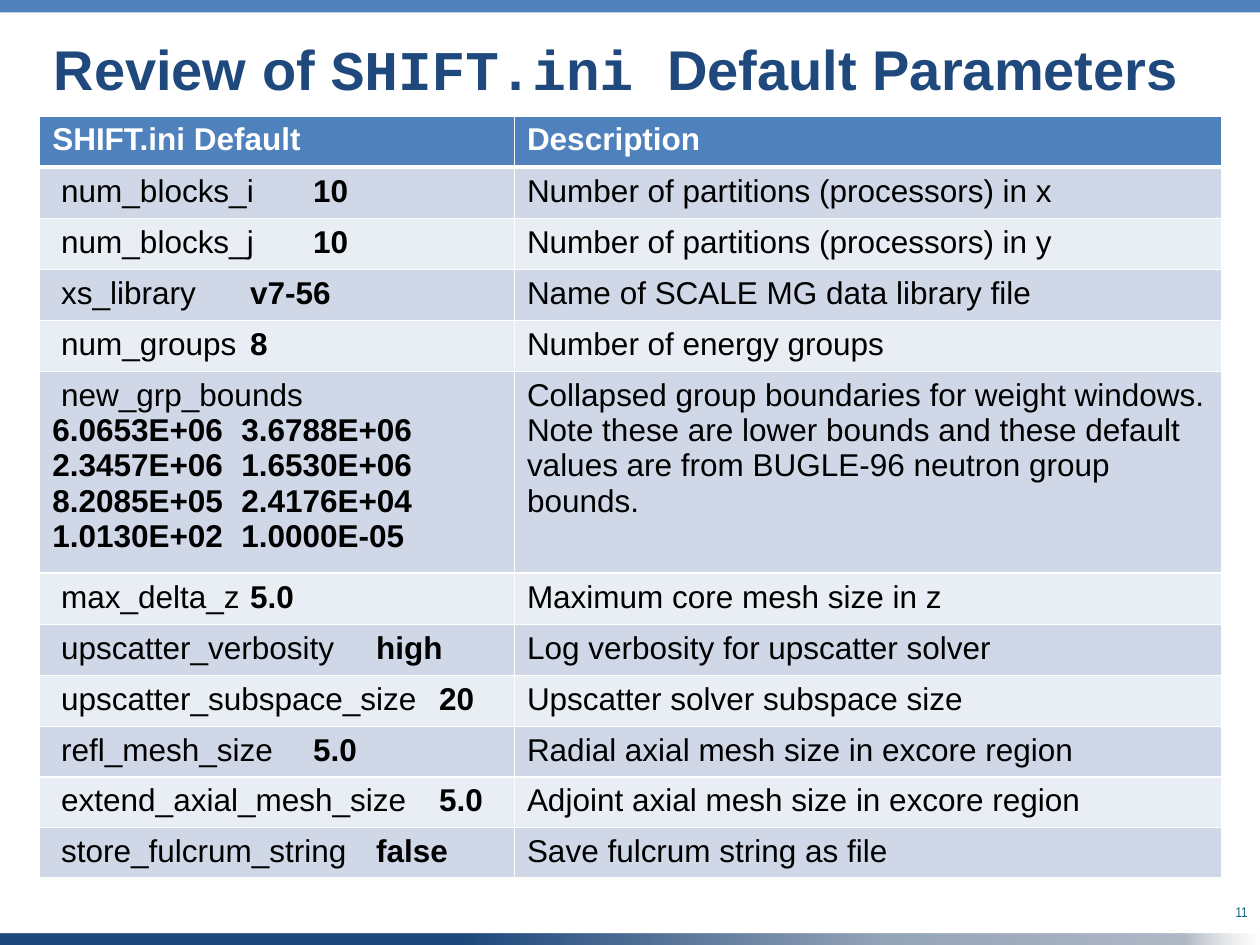
"""Build the slide reviewing the SHIFT.ini default parameters."""
from pptx import Presentation
from pptx.dml.color import RGBColor
from pptx.enum import shapes, text
from pptx.oxml import ns, parse_xml
from pptx.util import Cm, Pt

COLORS = {"navy": "1F497D", "blue": "4F81BD", "teal": "096582", "white": "FFFFFF",
          "black": "000000", "odd": "D0D8E8", "even": "E9EDF4"}
TITLE = [("Review of ", "Arial"), ("SHIFT.ini ", "Courier New"), ("Default Parameters", "Arial")]
PAGE_NUMBER = "11"
HEADER = ("SHIFT.ini Default", "Description")
BOUNDS = [("6.0653E+06", "3.6788E+06"), ("2.3457E+06", "1.6530E+06"),
          ("8.2085E+05", "2.4176E+04"), ("1.0130E+02", "1.0000E-05")]
PARAMETERS = [
    ("num_blocks_i", "10", "Number of partitions (processors) in x"),
    ("num_blocks_j", "10", "Number of partitions (processors) in y"),
    ("xs_library", "v7-56", "Name of SCALE MG data library file"),
    ("num_groups", "8", "Number of energy groups"),
    ("new_grp_bounds", BOUNDS, "Collapsed group boundaries for weight windows. Note these are "
     "lower bounds and these default values are from BUGLE-96 neutron group bounds."),
    ("max_delta_z", "5.0", "Maximum core mesh size in z"),
    ("upscatter_verbosity", "high", "Log verbosity for upscatter solver"),
    ("upscatter_subspace_size", "20", "Upscatter solver subspace size"),
    ("refl_mesh_size", "5.0", "Radial axial mesh size in excore region"),
    ("extend_axial_mesh_size", "5.0", "Adjoint axial mesh size in excore region"),
    ("store_fulcrum_string", "false", "Save fulcrum string as file"),
]
COLUMNS = (9.57, 14.26)
ROWS = [1.03] * 5 + [3.8] + [1.03] * 3 + [0.96] * 3
GRADIENT = [(37, "1F497D", 100), (70, "95A4B8", 100), (94, "B0B9C6", 100), (100, "DBDBDB", 0)]


def rgb(name):
    """Return the named colour."""
    return RGBColor.from_string(COLORS[name])


def apply(target, values):
    """Set every attribute in values on the target."""
    for name, value in values.items():
        setattr(target, name, value)


def style(span, color, size=18, bold=False, name="Arial"):
    """Format one run."""
    apply(span.font, {"size": Pt(size), "bold": bold, "name": name})
    span.font.color.rgb = rgb(color)


def write(para, content, color="black", **options):
    """Add one formatted run to a paragraph."""
    span = para.add_run()
    span.text = content
    style(span, color, **options)


def set_layout(para, tab, align, indent=0):
    """Give a paragraph one tab stop and a left indent."""
    properties = para._p.get_or_add_pPr()
    properties.set("marL", str(Cm(indent)))
    properties.set("indent", "0")
    properties.append(parse_xml(
        f'<a:tabLst {ns.nsdecls("a")}><a:tab pos="{Cm(tab)}" algn="{align}"/></a:tabLst>'))


def add_bar(page, top):
    """Add a full-width bar."""
    bar = page.shapes.add_shape(shapes.MSO_SHAPE.RECTANGLE, 0, Cm(top), Cm(25.4), Cm(0.25))
    bar.shadow.inherit = False
    bar.line.fill.background()
    return bar


def fade(bar):
    """Fill a bar with the fading gradient."""
    stops = "".join(
        f'<a:gs pos="{place * 1000}"><a:srgbClr val="{color}"><a:alpha val="{alpha * 1000}"/>'
        "</a:srgbClr></a:gs>" for place, color, alpha in GRADIENT)
    bar._element.spPr.insert(2, parse_xml(
        f'<a:gradFill {ns.nsdecls("a")} rotWithShape="1"><a:gsLst>{stops}</a:gsLst>'
        '<a:lin ang="0" scaled="0"/></a:gradFill>'))


def paint(cell, row):
    """Fill a cell by its row and give it white borders."""
    cell.fill.solid()
    cell.fill.fore_color.rgb = rgb("blue" if row == 0 else "odd" if row % 2 else "even")
    heavy = {"T": row == 1, "B": row == 0}
    for index, side in enumerate("LRTB"):
        width = Pt(3 if heavy.get(side) else 1)
        cell._tc.tcPr.insert(index, parse_xml(
            f'<a:ln{side} {ns.nsdecls("a")} w="{width}"><a:solidFill>'
            f'<a:srgbClr val="{COLORS["white"]}"/></a:solidFill></a:ln{side}>'))


def write_default(frame, name, value):
    """Write a parameter name with its default value."""
    para = frame.paragraphs[0]
    set_layout(para, 8.8, "r", 0.18)
    write(para, name)
    if isinstance(value, str):
        write(para, "\t", bold=True)
        write(para, value, bold=True)
        return
    para = frame.add_paragraph()
    set_layout(para, 3.79, "l")
    for index, pair in enumerate(value):
        if index:
            para.add_line_break()
        write(para, "\t".join(pair), bold=True)


def add_parameters(page):
    """Add the table of parameters."""
    table = page.shapes.add_table(len(ROWS), len(COLUMNS), Cm(0.8), Cm(2.34),
                                  Cm(sum(COLUMNS)), Cm(sum(ROWS))).table
    for column, width in zip(table.columns, COLUMNS):
        column.width = Cm(width)
    for index, height in enumerate(ROWS):
        table.rows[index].height = Cm(height)
        for cell in table.rows[index].cells:
            paint(cell, index)
    for index, label in enumerate(HEADER):
        write(table.cell(0, index).text_frame.paragraphs[0], label, "white", bold=True)
    for row, (name, value, description) in enumerate(PARAMETERS, 1):
        write_default(table.cell(row, 0).text_frame, name, value)
        write(table.cell(row, 1).text_frame.paragraphs[0], description)


def add_title(page):
    """Place and fill the title."""
    box = page.shapes.title
    apply(box, {"left": Cm(0.8), "top": Cm(0.76), "width": Cm(23.55), "height": Cm(2.39)})
    apply(box.text_frame, {
        "margin_left": Cm(0.28), "margin_right": Cm(0.28), "margin_top": Cm(0.15),
        "margin_bottom": Cm(0.15), "word_wrap": True, "auto_size": text.MSO_AUTO_SIZE.NONE,
        "vertical_anchor": text.MSO_ANCHOR.TOP})
    para = box.text_frame.paragraphs[0]
    apply(para, {"alignment": text.PP_ALIGN.LEFT, "line_spacing": 0.85})
    for content, font in TITLE:
        write(para, content, "navy", size=32, bold=True, name=font)


def add_page_number(page):
    """Add the page number at the lower right."""
    box = page.shapes.add_textbox(Cm(19.33), Cm(18.08), Cm(6.07), Cm(0.6))
    box.text_frame.word_wrap = True
    para = box.text_frame.paragraphs[0]
    para.alignment = text.PP_ALIGN.RIGHT
    write(para, PAGE_NUMBER, "teal", size=8, name="Arial Narrow")


def main():
    """Build and save the deck."""
    deck = Presentation()
    apply(deck, {"slide_width": Cm(25.4), "slide_height": Cm(19.05)})
    page = deck.slides.add_slide(deck.slide_layouts[5])
    top_bar = add_bar(page, 0)
    top_bar.fill.solid()
    top_bar.fill.fore_color.rgb = rgb("blue")
    fade(add_bar(page, 18.82))
    add_page_number(page)
    add_title(page)
    add_parameters(page)
    deck.save("out.pptx")


if __name__ == "__main__":
    main()
